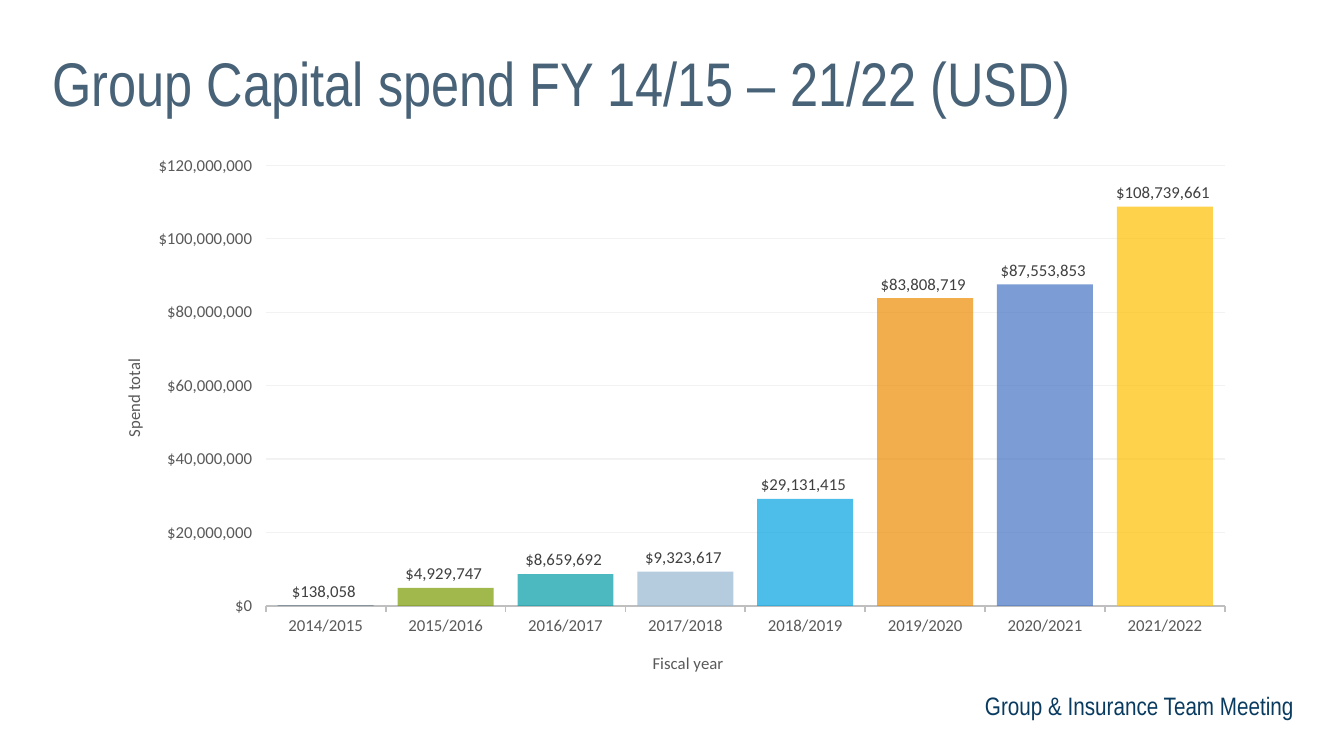
import pptx
import pptx.chart.data
import pptx.dml.color
import pptx.enum.chart
import pptx.enum.text
import pptx.oxml.ns
import pptx.util
from lxml import etree
from pptx.util import Inches

COLORS = {
    "slate": "486278", "olive": "7A9A01", "teal": "009CA6", "mist": "97B7D1",
    "sky": "00A3E0", "orange": "ED8B00", "blue": "4472C4", "gold": "FFC000",
    "navy": "093B60", "axis_text": "595959", "label_text": "404040",
    "axis_line": "BFBFBF", "grid": "F2F2F2", "black": "000000", "white": "FFFFFF",
}
SPEND = [
    ("2014/2015", 138058, "slate"),
    ("2015/2016", 4929747, "olive"),
    ("2016/2017", 8659692, "teal"),
    ("2017/2018", 9323617, "mist"),
    ("2018/2019", 29131415, "sky"),
    ("2019/2020", 83808719, "orange"),
    ("2020/2021", 87553853, "blue"),
    ("2021/2022", 108739661, "gold"),
]
DOLLARS = '"$"#,##0_);[Red]\\("$"#,##0\\)'
qn = pptx.oxml.ns.qn


def rgb(name):
    return pptx.dml.color.RGBColor.from_string(COLORS[name])


def style_font(font, size, color, face="Calibri"):
    font.name = face
    font.size = pptx.util.Pt(size)
    font.bold = False
    font.color.rgb = rgb(color)


def write_text(frame, text, size, color, face="Calibri", align=None,
               line_spacing=None):
    frame.text = text
    paragraph = frame.paragraphs[0]
    paragraph.alignment = align
    paragraph.line_spacing = line_spacing
    style_font(paragraph.runs[0].font, size, color, face)


def place_text(shape, box, text, **text_format):
    shape.left, shape.top, shape.width, shape.height = map(Inches, box)
    frame = shape.text_frame
    frame.word_wrap = True
    frame.auto_size = pptx.enum.text.MSO_AUTO_SIZE.NONE
    frame.vertical_anchor = pptx.enum.text.MSO_ANCHOR.MIDDLE
    write_text(frame, text, face="Arial Narrow", **text_format)


def set_layout(parent, index, target=None, **fractions):
    layout = parent.find(qn("c:layout"))
    if layout is None:
        layout = etree.Element(qn("c:layout"))
        parent.insert(index, layout)
    manual = etree.SubElement(layout, qn("c:manualLayout"))
    entries = [("layoutTarget", target)] if target else []
    entries += [("xMode", "edge"), ("yMode", "edge"), *fractions.items()]
    for tag, value in entries:
        etree.SubElement(manual, qn("c:" + tag)).set("val", str(value))


def fill_bar(bar, color, opacity=70):
    bar.format.fill.solid()
    bar.format.fill.fore_color.rgb = rgb(color)
    for srgb in bar.format.fill._xPr.iter(qn("a:srgbClr")):
        etree.SubElement(srgb, qn("a:alpha")).set("val", str(opacity * 1000))


def title_axis(axis, text, x, y, rotation=0):
    frame = axis.axis_title.text_frame
    write_text(frame, text, 12, "axis_text")
    frame._txBody.bodyPr.set("rot", str(rotation * 60000))
    frame._txBody.bodyPr.set("vert", "horz")
    set_layout(axis.axis_title._element, 1, x=x, y=y)


def style_axes(chart):
    outside = pptx.enum.chart.XL_TICK_MARK.OUTSIDE
    years, dollars = chart.category_axis, chart.value_axis
    for axis in (years, dollars):
        axis.major_tick_mark = outside
        style_font(axis.tick_labels.font, 12, "axis_text")
    years.format.line.color.rgb = rgb("axis_line")
    years.format.line.width = pptx.util.Pt(1.25)
    title_axis(years, "Fiscal year", 0.48, 0.95)

    dollars.minimum_scale = 0
    dollars.maximum_scale = 120000000
    dollars.major_unit = 20000000
    dollars.format.line.fill.background()
    dollars.major_gridlines.format.line.color.rgb = rgb("grid")
    dollars.major_gridlines.format.line.width = pptx.util.Pt(0.75)
    dollars.tick_labels.number_format = DOLLARS
    dollars.tick_labels.number_format_is_linked = False
    title_axis(dollars, "Spend total", 0.01, 0.4, rotation=-90)


def label_bars(bars):
    labels = bars.data_labels
    labels.show_value = True
    labels.position = pptx.enum.chart.XL_LABEL_POSITION.OUTSIDE_END
    labels.number_format = DOLLARS
    labels.number_format_is_linked = False
    style_font(labels.font, 12, "label_text")


def add_spend_chart(slide):
    data = pptx.chart.data.CategoryChartData(number_format=DOLLARS)
    data.categories = [year for year, _, _ in SPEND]
    data.add_series("Series 1", [amount for _, amount, _ in SPEND])
    chart = slide.shapes.add_chart(
        pptx.enum.chart.XL_CHART_TYPE.COLUMN_CLUSTERED,
        Inches(1.07), Inches(1.43), Inches(11.19), Inches(5.3), data).chart
    chart.has_legend = False
    chart.has_title = False
    style_font(chart.font, 10, "black")
    set_layout(chart._chartSpace.chart.plotArea, 0, target="inner",
               x=0.14, y=0.04, w=0.85, h=0.83)
    style_axes(chart)

    plot = chart.plots[0]
    plot.gap_width = 25
    plot.overlap = 25
    plot.vary_by_categories = False
    bars = plot.series[0]
    fill_bar(bars, "blue")
    for index, (_, _, color) in enumerate(SPEND):
        fill_bar(bars.points[index], color)
    label_bars(bars)


def main():
    deck = pptx.Presentation()
    deck.slide_width, deck.slide_height = Inches(13.33), Inches(7.5)
    slide = deck.slides.add_slide(deck.slide_layouts[5])
    slide.background.fill.solid()
    slide.background.fill.fore_color.rgb = rgb("white")

    align = pptx.enum.text.PP_ALIGN
    place_text(slide.shapes.title, (0.42, 0.4, 12.51, 0.91),
               "Group Capital spend FY 14/15 – 21/22 (USD)",
               size=44, color="slate", align=align.LEFT, line_spacing=0.9)
    add_spend_chart(slide)
    meeting = slide.shapes.add_textbox(0, 0, 0, 0)
    place_text(meeting, (6.91, 6.85, 6.02, 0.35),
               "Group & Insurance Team Meeting",
               size=18, color="navy", align=align.RIGHT, line_spacing=0.8)
    deck.save("out.pptx")


if __name__ == "__main__":
    main()
